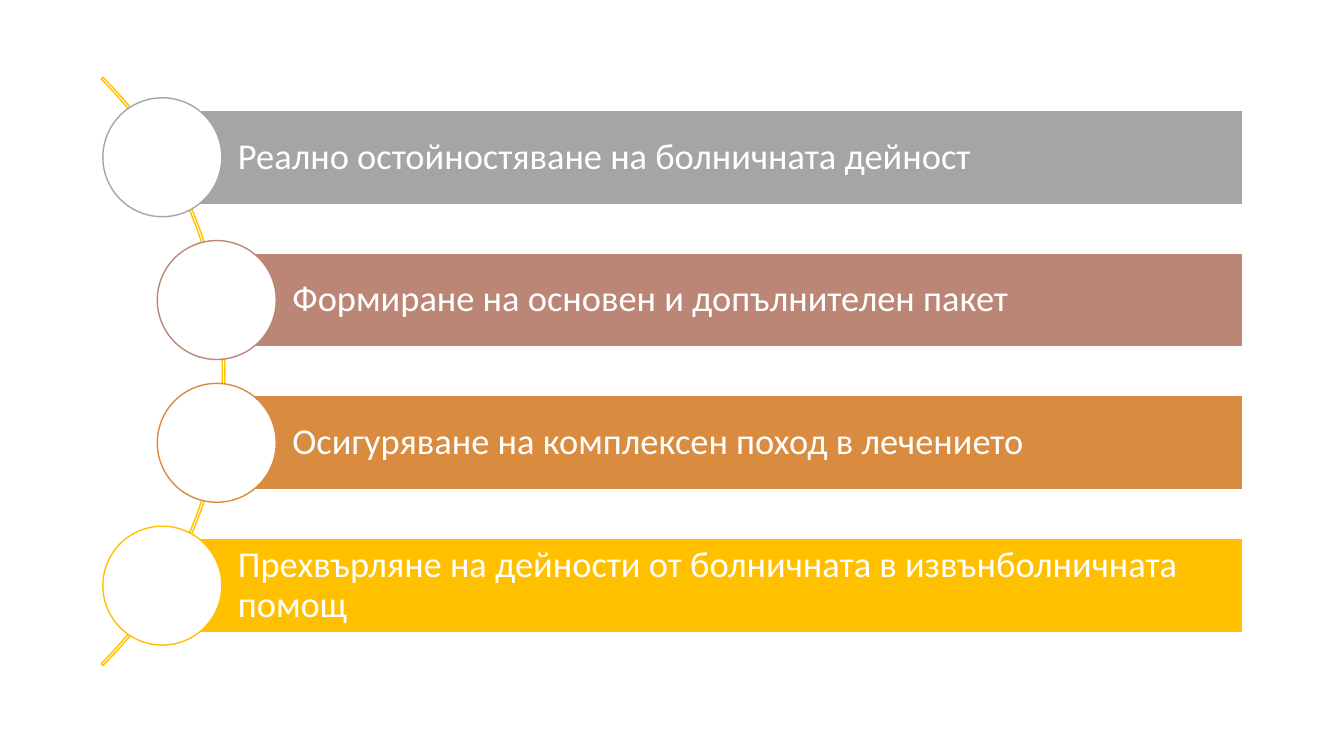
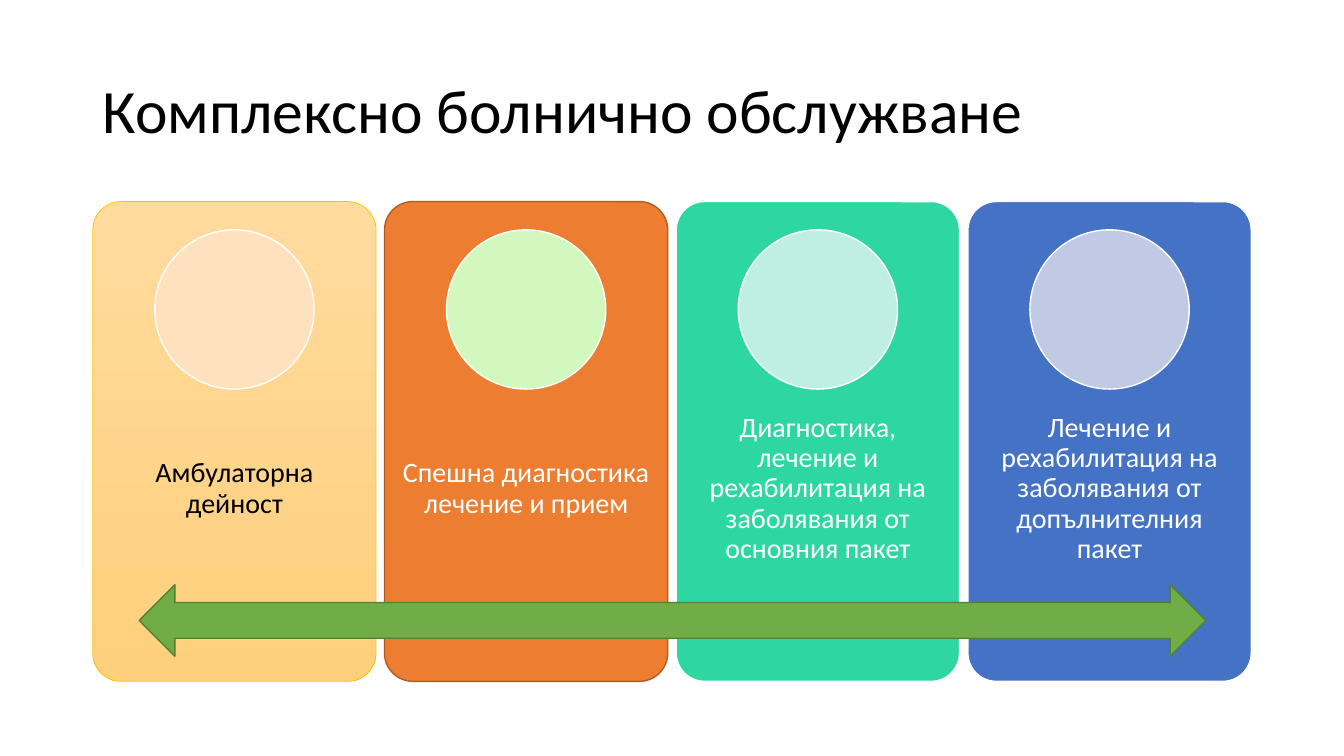
import pptx
import pptx.dml.color
import pptx.enum.shapes
import pptx.enum.text
import pptx.util

Inches = pptx.util.Inches
Pt = pptx.util.Pt
MSO_SHAPE = pptx.enum.shapes.MSO_SHAPE
ALIGN = pptx.enum.text.PP_ALIGN

FONT = "Calibri"
WHITE = "FFFFFF"
BLACK = "000000"
GOLD = "FFC000"
rgb = pptx.dml.color.RGBColor.from_string


def add_shape(page, kind, place, fill, line, line_width=1):
    """Add a preset shape; place is left, top, width, height in inches."""
    shape = page.shapes.add_shape(kind, *map(Inches, place))
    shape.shadow.inherit = False
    if fill is None:
        shape.fill.background()
    else:
        shape.fill.solid()
        shape.fill.fore_color.rgb = rgb(fill)
    shape.line.color.rgb = rgb(line)
    shape.line.width = Pt(line_width)
    return shape


def write(box, text, size, color, align, margins):
    """Write one paragraph; margins are left, top, right, bottom in inches."""
    frame = box.text_frame
    frame.word_wrap = True
    frame.vertical_anchor = pptx.enum.text.MSO_ANCHOR.MIDDLE
    (frame.margin_left, frame.margin_top,
     frame.margin_right, frame.margin_bottom) = map(Inches, margins)
    para = frame.paragraphs[0]
    para.alignment = align
    para.line_spacing = 0.9
    span = para.add_run()
    span.text = text
    span.font.name = FONT
    span.font.size = Pt(size)
    span.font.color.rgb = rgb(color)


deck = pptx.Presentation()
deck.slide_width = Inches(13.33)
deck.slide_height = Inches(7.5)
blank = deck.slide_layouts[6]

# Slide 1: four bars along an arc
page = deck.slides.add_slide(blank)
arc = add_shape(page, MSO_SHAPE.BLOCK_ARC, (-6.02, -0.44, 8.25, 8.25), None, GOLD)
for index, value in enumerate((189, 27, 0.003)):
    arc.adjustments[index] = value

bars = [
    (1.61, "A5A5A5", "Реално остойностяване на болничната дейност"),
    (2.15, "BB8676", "Формиране на основен и допълнителен пакет"),
    (2.15, "D98B3F", "Осигуряване на комплексен поход в лечението"),
    (1.61, GOLD, "Прехвърляне на дейности от болничната в извънболничната помощ"),
]
bar_right, bar_height, knob = 12.33, 0.94, 1.18
bar_pitch = (5.34 - 1.09) / 3
for index, (left, color, text) in enumerate(bars):
    top = 1.09 + index * bar_pitch
    bar = add_shape(page, MSO_SHAPE.RECTANGLE,
                    (left, top, bar_right - left, bar_height), color, WHITE, 1.5)
    write(bar, text, 26, WHITE, ALIGN.LEFT, (0.75, 0.07, 0.07, 0.07))
    knob_top = top + (bar_height - knob) / 2
    add_shape(page, MSO_SHAPE.OVAL, (left - knob / 2, knob_top, knob, knob), WHITE, color)

# Slide 2: four cards joined by a double arrow
page = deck.slides.add_slide(blank)
title = page.shapes.add_textbox(Inches(0.92), Inches(0.4), Inches(11.5), Inches(1.45))
write(title, "Комплексно болнично обслужване", 44, BLACK, ALIGN.LEFT, (0.1, 0.05, 0.1, 0.05))

cards = [
    ("FFD590", GOLD, 0.5, "FFE2BD", BLACK, "Амбулаторна дейност"),
    ("ED7D31", "AF5C24", 1, "D3F8BD", WHITE, "Спешна диагностика лечение и прием"),
    ("2ED7A1", WHITE, 1, "BEEFE0", WHITE,
     "Диагностика, лечение и рехабилитация на заболявания от основния пакет"),
    ("4472C4", WHITE, 1, "C1CAE4", WHITE,
     "Лечение и рехабилитация на заболявания от допълнителния пакет"),
]
card_width, disc = 2.81, 1.58
card_pitch = (9.6 - 0.92) / 3
for index, (fill, line, line_width, disc_fill, color, text) in enumerate(cards):
    left = 0.92 + index * card_pitch
    card = add_shape(page, MSO_SHAPE.ROUNDED_RECTANGLE,
                     (left, 2, card_width, 4.76), fill, line, line_width)
    card.adjustments[0] = 0.1
    if index == 0:
        card.fill.gradient()
        card.fill.gradient_angle = 270
        for stop, stop_color in zip(card.fill.gradient_stops, ("FFDB9E", "FFD07C")):
            stop.color.rgb = rgb(stop_color)
    write(card, text, 20, color, ALIGN.CENTER, (0.07, 1.98, 0.07, 1.04))
    add_shape(page, MSO_SHAPE.OVAL,
              (left + (card_width - disc) / 2, 2.28, disc, disc), disc_fill, WHITE)

add_shape(page, MSO_SHAPE.LEFT_RIGHT_ARROW, (1.38, 5.8, 10.58, 0.71), "70AD47", "538035")

deck.save("out.pptx")
